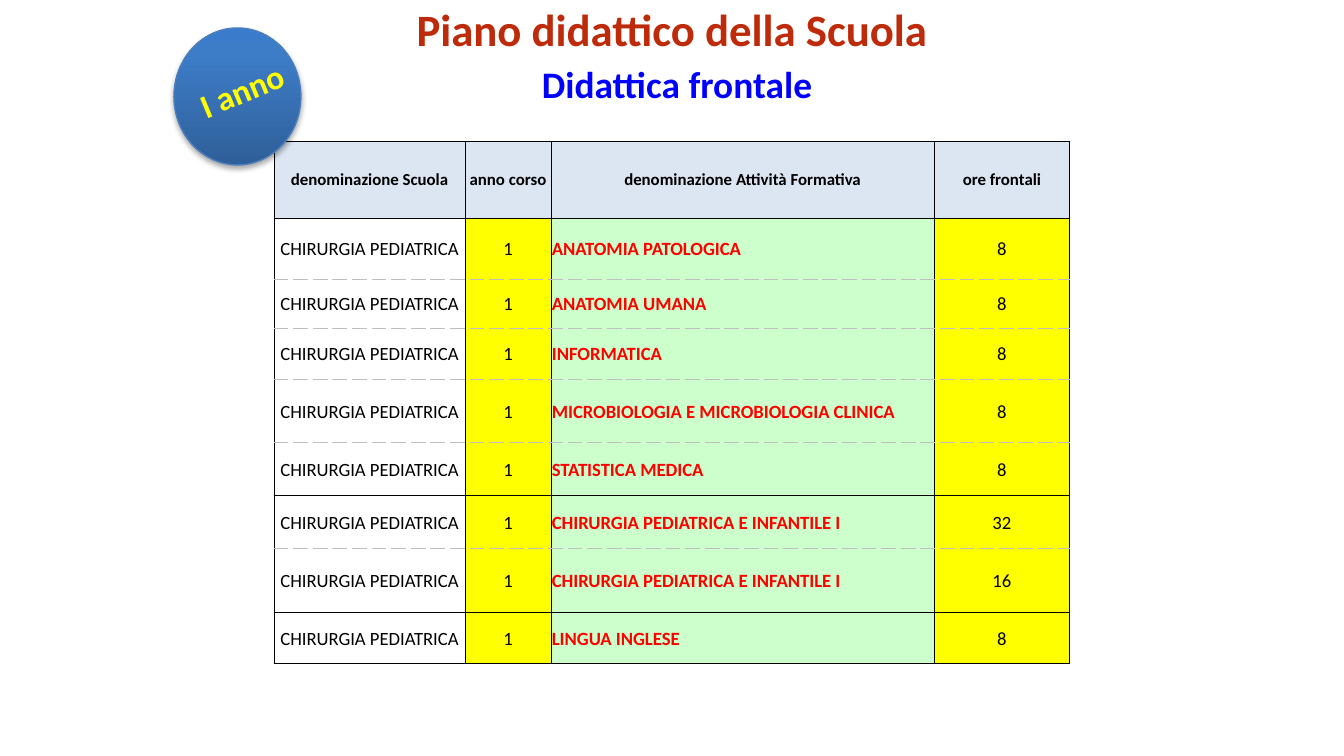
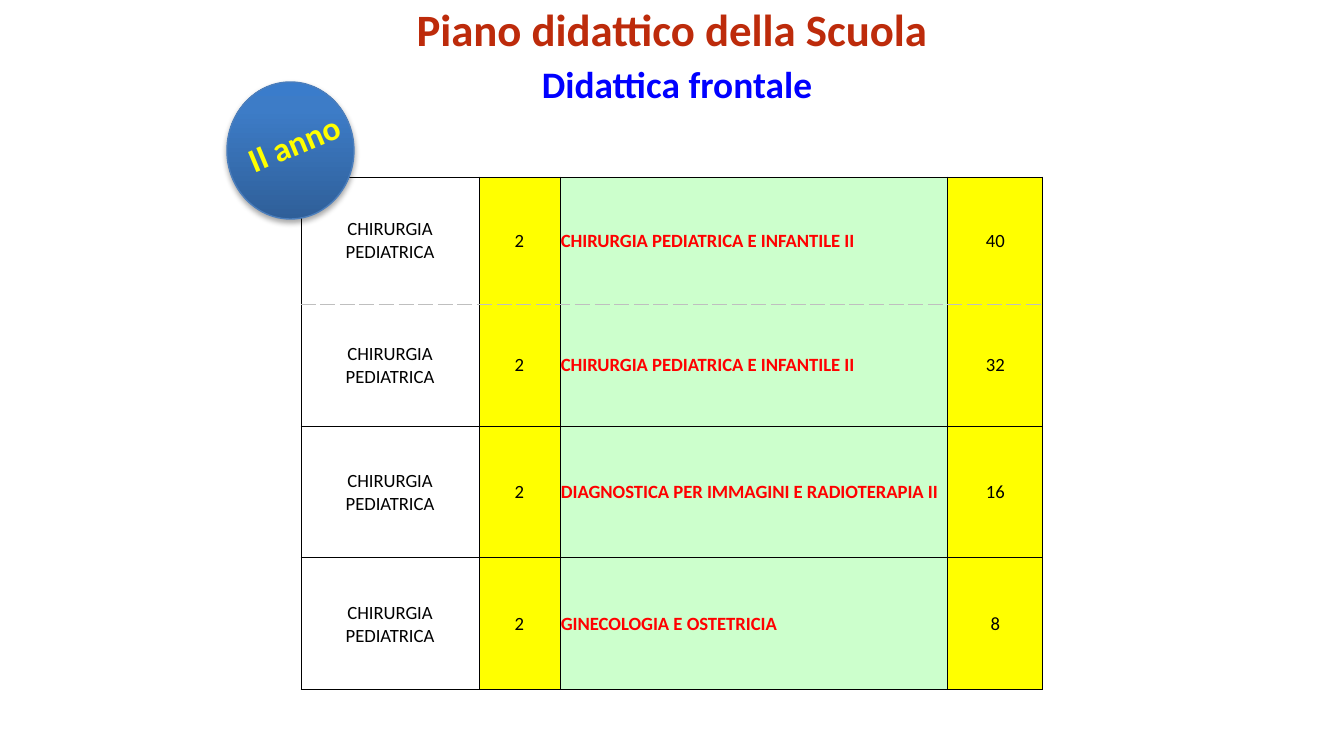
from lxml import etree
from pptx import Presentation, util as u
from pptx.dml.color import RGBColor
from pptx.enum import shapes, text
from pptx.oxml import parse_xml
from pptx.oxml.ns import nsdecls, qn

EMU_PER_PX = 914400 / 134.4
FONT = "Calibri"
BLACK, GREY, YELLOW = "000000", "BFBFBF", "FFFF00"
BRICK, BLUE, RED = "BD2B0B", "0000FF", "FF0000"
HEADER_FILL, ACTIVITY_FILL, BADGE_LINE = "DCE6F2", "CCFFCC", "4B7EBC"
COLUMN_FILLS = [None, YELLOW, ACTIVITY_FILL, YELLOW]
ACTIVITY_COLUMN = 2
SCHOOL = "CHIRURGIA PEDIATRICA"
HEADINGS = ["denominazione Scuola", "anno corso", "denominazione Attività Formativa", "ore frontali"]

# Each course: activity, hours, row height, dashed rule below
FIRST_YEAR = [
    ("ANATOMIA PATOLOGICA", 8, 61, True),
    ("ANATOMIA UMANA", 8, 49, True),
    ("INFORMATICA", 8, 52, True),
    ("MICROBIOLOGIA E MICROBIOLOGIA CLINICA", 8, 63, True),
    ("STATISTICA MEDICA", 8, 53, False),
    ("CHIRURGIA PEDIATRICA E INFANTILE I", 32, 53, True),
    ("CHIRURGIA PEDIATRICA E INFANTILE I", 16, 64, False),
    ("LINGUA INGLESE", 8, 51, False),
]
SECOND_YEAR = [
    ("CHIRURGIA PEDIATRICA E INFANTILE II", 40, 127, True),
    ("CHIRURGIA PEDIATRICA E INFANTILE II", 32, 122, False),
    ("DIAGNOSTICA PER IMMAGINI E RADIOTERAPIA II", 16, 132, False),
    ("GINECOLOGIA E OSTETRICIA", 8, 132, False),
]

BADGE_GRADIENT = f"""<a:gradFill {nsdecls('a')} rotWithShape="1"><a:gsLst>
<a:gs pos="0"><a:srgbClr val="2F5F99"/></a:gs>
<a:gs pos="80000"><a:srgbClr val="3D7CC7"/></a:gs>
<a:gs pos="100000"><a:srgbClr val="3A7CCB"/></a:gs>
</a:gsLst><a:lin ang="16200000" scaled="0"/></a:gradFill>"""
BADGE_SHADOW = f"""<a:effectLst {nsdecls('a')}>
<a:outerShdw blurRad="40000" dist="23000" dir="5400000" rotWithShape="0">
<a:srgbClr val="000000"><a:alpha val="35000"/></a:srgbClr></a:outerShdw></a:effectLst>"""


def px(length):
    """Turn pixels into EMU."""
    return u.Emu(round(length * EMU_PER_PX))


def rgb(value):
    """Turn a hex string into a colour."""
    return RGBColor.from_string(value)


def style(paragraph, size, colour, bold):
    """Format every run of a paragraph."""
    for run in paragraph.runs:
        run.font.name = FONT
        run.font.size = u.Pt(size)
        run.font.bold = bold
        run.font.color.rgb = rgb(colour)


def add_title(slide):
    """Add the two-line heading shared by the slides."""
    frame = slide.shapes.add_textbox(px(58), px(8), px(1238), px(71)).text_frame
    frame.word_wrap = True
    frame.text = "Piano didattico della Scuola \nDidattica frontale"
    school_line, teaching_line = frame.paragraphs
    teaching_line.space_before = u.Pt(5)
    for line, size, colour in ((school_line, 24, BRICK), (teaching_line, 20, BLUE)):
        line.alignment = text.PP_ALIGN.CENTER
        line.line_spacing = u.Pt(22)
        style(line, size, colour, True)


def add_badge(slide, year, disc_at, label_at):
    """Add the shaded disc and its tilted year label."""
    left, top = disc_at
    disc = slide.shapes.add_shape(shapes.MSO_SHAPE.OVAL, px(left), px(top), px(127), px(137))
    disc.line.color.rgb = rgb(BADGE_LINE)
    disc.line.width = u.Pt(0.75)
    properties = disc._element.spPr
    properties.find(qn("a:prstGeom")).addnext(parse_xml(BADGE_GRADIENT))
    properties.append(parse_xml(BADGE_SHADOW))

    left, top = label_at
    label = slide.shapes.add_textbox(px(left), px(top), px(128), px(69))
    label.rotation = 337.4
    label.text_frame.word_wrap = True
    label.text_frame.text = year
    style(label.text_frame.paragraphs[0], 18, YELLOW, True)


def add_border(cell, side, dashed):
    """Draw one cell edge, solid black or dashed grey."""
    line = etree.SubElement(cell._tc.get_or_add_tcPr(), qn(f"a:ln{side}"), w=str(u.Pt(0.5)))
    fill = etree.SubElement(line, qn("a:solidFill"))
    etree.SubElement(fill, qn("a:srgbClr"), val=GREY if dashed else BLACK)
    etree.SubElement(line, qn("a:prstDash"), val="dash" if dashed else "solid")


def fill_cell(cell, content, fill, size=10, colour=BLACK, bold=False, centred=True, dashes=""):
    """Write and format one cell; dashes names its dashed sides."""
    cell.margin_left = cell.margin_right = cell.margin_top = px(1)
    cell.margin_bottom = 0
    cell.vertical_anchor = text.MSO_ANCHOR.MIDDLE
    for side in "LRTB":
        add_border(cell, side, side in dashes)
    if fill:
        cell.fill.solid()
        cell.fill.fore_color.rgb = rgb(fill)
    else:
        cell.fill.background()
    cell.text_frame.text = content
    paragraph = cell.text_frame.paragraphs[0]
    paragraph.alignment = text.PP_ALIGN.CENTER if centred else text.PP_ALIGN.LEFT
    style(paragraph, size, colour, bold)


def add_plan(slide, left, top, widths, year, courses, header_height=0):
    """Add the course table, with a heading row when it has a height."""
    heights = [header_height] * bool(header_height) + [course[2] for course in courses]
    table = slide.shapes.add_table(
        len(heights), len(widths), px(left), px(top), px(sum(widths)), px(sum(heights))
    ).table
    table.first_row = table.horz_banding = False
    for column, width in zip(table.columns, widths):
        column.width = px(width)
    for row, height in zip(table.rows, heights):
        row.height = px(height)

    if header_height:
        for cell, heading in zip(table.rows[0].cells, HEADINGS):
            fill_cell(cell, heading, HEADER_FILL, size=9, bold=True)
    dashed_above = False
    first_course = len(heights) - len(courses)
    for row, (activity, hours, _, dashed_below) in enumerate(courses, first_course):
        dashes = "T" * dashed_above + "B" * dashed_below
        contents = [SCHOOL, str(year), activity, str(hours)]
        for column, content in enumerate(contents):
            is_activity = column == ACTIVITY_COLUMN
            fill_cell(
                table.cell(row, column), content, COLUMN_FILLS[column],
                colour=RED if is_activity else BLACK,
                bold=is_activity, centred=not is_activity, dashes=dashes,
            )
        dashed_above = dashed_below


def main():
    """Build the two yearly teaching plans."""
    deck = Presentation()
    deck.slide_width, deck.slide_height = px(1344), px(756)
    blank = deck.slide_layouts[6]

    first = deck.slides.add_slide(blank)
    add_plan(first, 274, 141, [191, 86, 383, 136], 1, FIRST_YEAR, header_height=77)
    add_title(first)
    add_badge(first, "I anno", (174, 28), (187, 60))

    second = deck.slides.add_slide(blank)
    add_plan(second, 301, 177, [178, 81, 388, 95], 2, SECOND_YEAR)
    add_title(second)
    add_badge(second, "II anno", (227, 82), (235, 114))

    deck.save("out.pptx")


if __name__ == "__main__":
    main()
